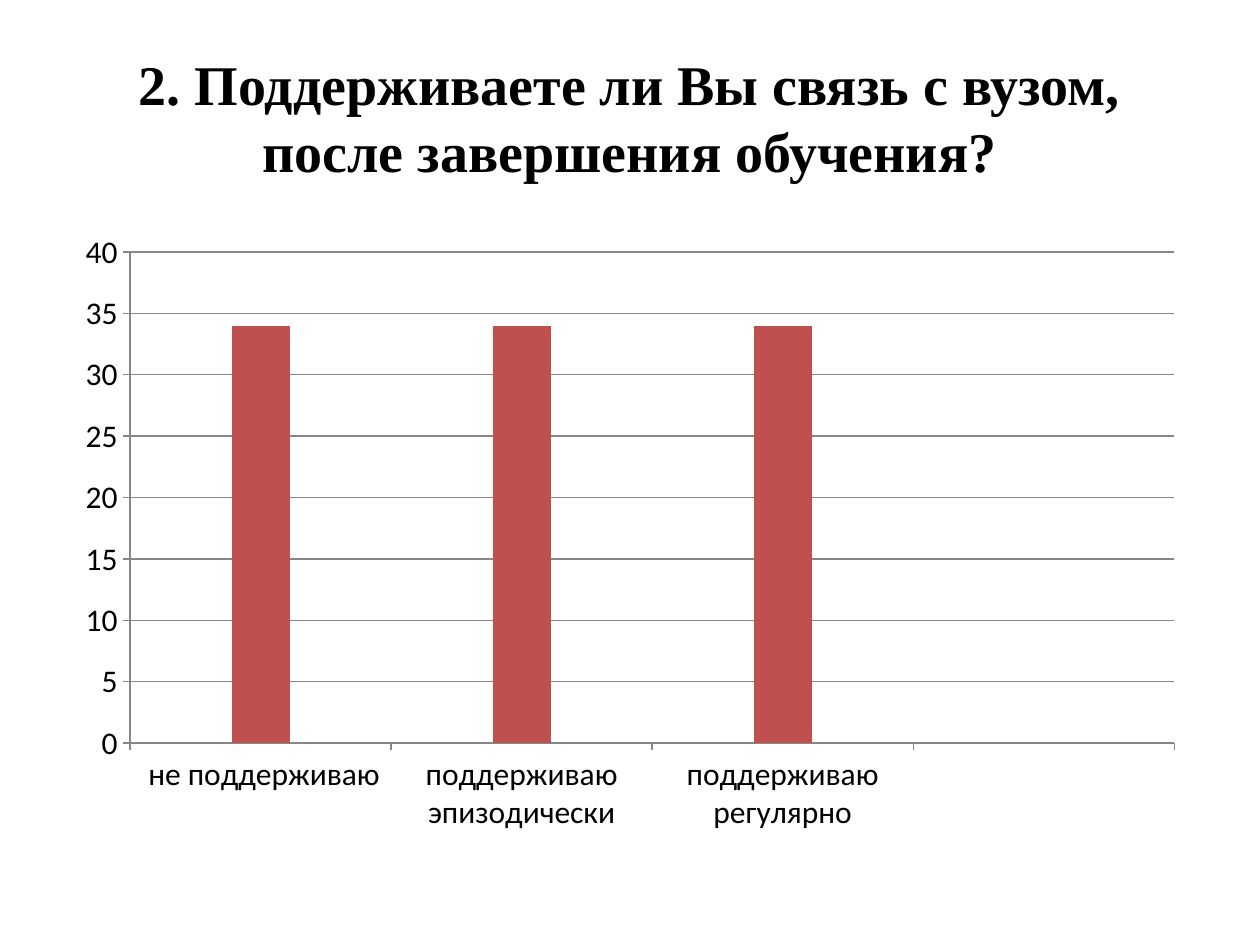
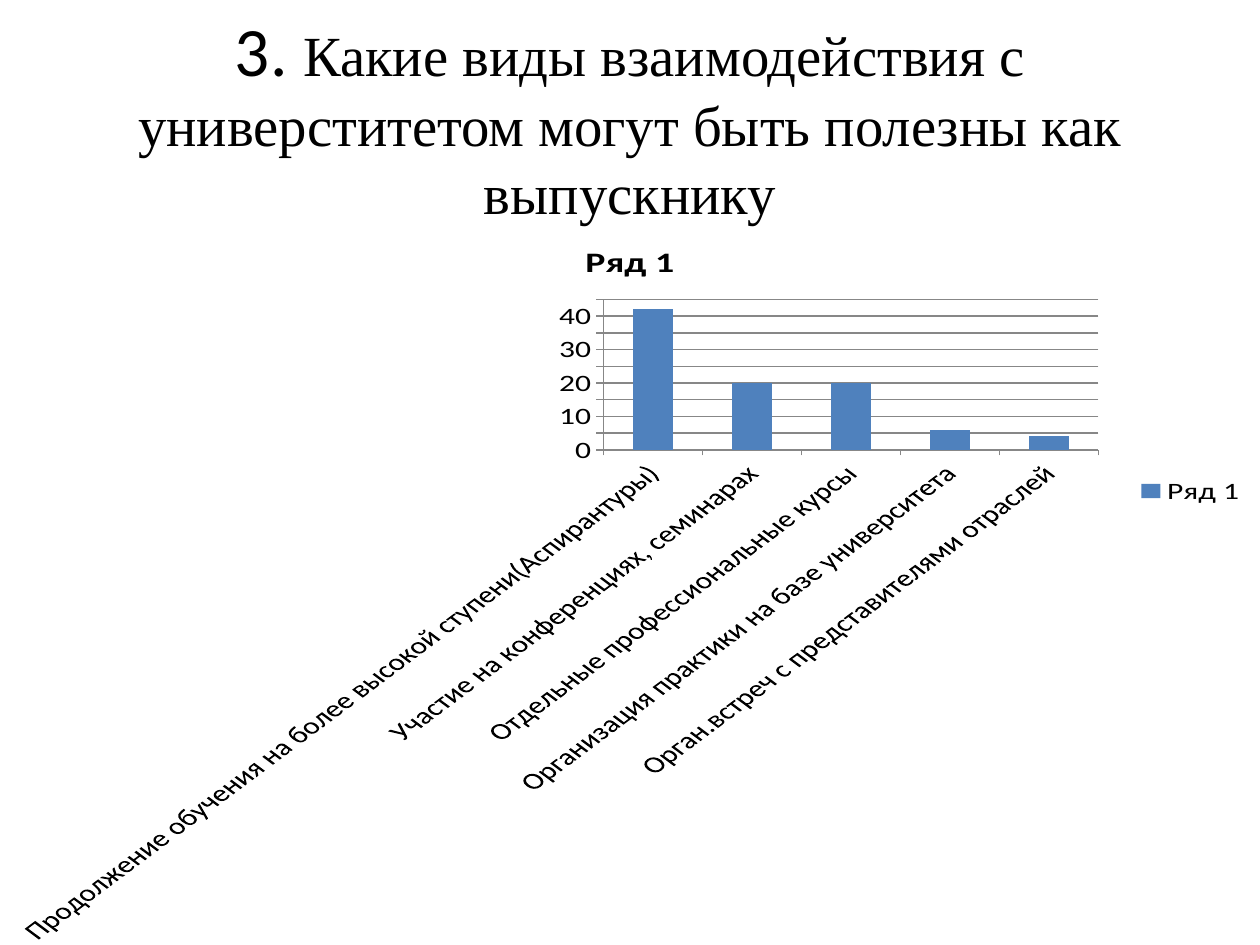
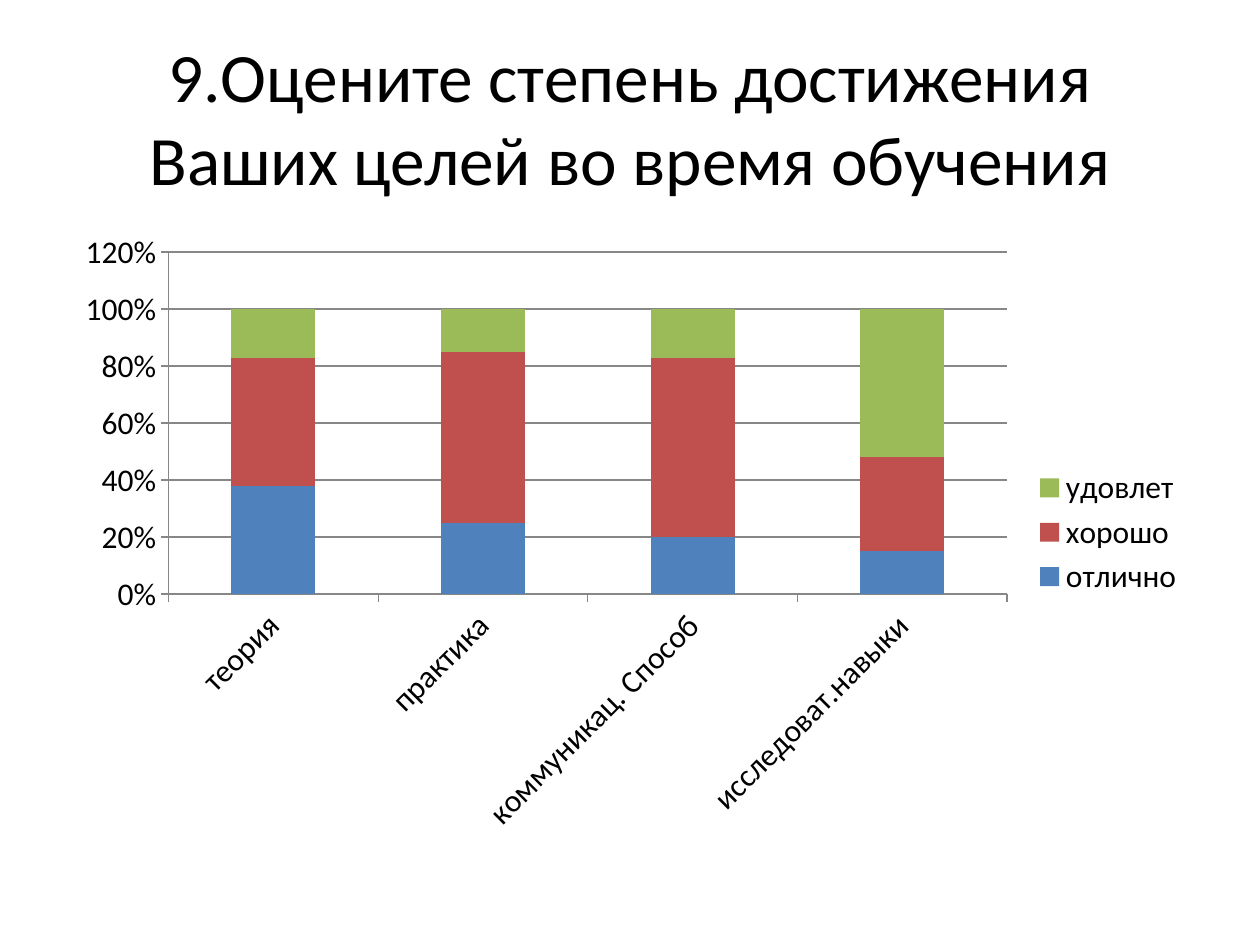
import pptx
import pptx.chart.data
import pptx.dml.color
import pptx.enum.chart
import pptx.enum.text
import pptx.util

Inches = pptx.util.Inches
Pt = pptx.util.Pt

COLORS = {
    "text": "000000",
    "grid": "878787",
    "blue": "4F81BD",
    "red": "C0504D",
    "green": "9BBB59",
}
SERIES_COLORS = ["blue", "red", "green"]
BODY_FONT = "Calibri"
SERIF_FONT = "Times New Roman"
CLUSTERED = pptx.enum.chart.XL_CHART_TYPE.COLUMN_CLUSTERED
STACKED = pptx.enum.chart.XL_CHART_TYPE.COLUMN_STACKED
STANDARD_BOX = (0.5, 1.75, 9, 4.95)
EMPTY_SERIES = [None] * 4

# Title runs are (text, size, font, bold).
SURVEY_QUESTIONS = [
    {
        "title": [("2. Поддерживаете ли Вы связь с вузом, после завершения обучения?", 32, SERIF_FONT, True)],
        "type": CLUSTERED,
        "box": STANDARD_BOX,
        "categories": [" не поддерживаю", "поддерживаю эпизодически", "поддерживаю регулярно", ""],
        "series": {
            "Series 1": EMPTY_SERIES,
            "Series 2": [34, 34, 34, None],
            "Series 3": EMPTY_SERIES,
        },
        "legend": False,
        "maximum": 40,
        "step": 5,
        "format": "General",
    },
    {
        "title": [
            ("3. ", 39.6, BODY_FONT, False),
            ("Какие виды взаимодействия с универститетом могут быть полезны как выпускнику", 32.4, SERIF_FONT, False),
        ],
        "type": CLUSTERED,
        "box": (0, 1.75, 10, 5.75),
        "chart_title": "Ряд 1",
        "categories": [
            "Продолжение обучения на более высокой ступени(Аспирантуры)",
            "Участие на конференциях, семинарах",
            "Отдельные профессиональные курсы",
            "Организация практики на базе университета",
            "Орган.встреч с представителями отраслей",
        ],
        "series": {"Ряд 1": [42, 20, 20, 6, 4]},
        "legend": True,
        "maximum": 45,
        "step": 5,
        "format": "General",
    },
    {
        "title": [("9.Оцените степень достижения Ваших целей во время обучения", 39.6, BODY_FONT, False)],
        "type": STACKED,
        "box": STANDARD_BOX,
        "categories": ["теория", "практика", "коммуникац. Способ", "исследоват.навыки"],
        "series": {
            "отлично": [0.38, 0.25, 0.2, 0.15],
            "хорошо": [0.45, 0.6, 0.63, 0.33],
            "удовлет": [0.17, 0.15, 0.17, 0.52],
        },
        "legend": True,
        "maximum": 1.2,
        "step": 0.2,
        "format": "0%",
    },
]


def color(name):
    return pptx.dml.color.RGBColor.from_string(COLORS[name])


def format_font(font, size, name=BODY_FONT, bold=False):
    font.size = Pt(size)
    font.name = name
    font.bold = bold
    font.color.rgb = color("text")


presentation = pptx.Presentation()
presentation.slide_width = Inches(10)
presentation.slide_height = Inches(7.5)
title_only_layout = presentation.slide_layouts[5]

for question in SURVEY_QUESTIONS:
    slide = presentation.slides.add_slide(title_only_layout)

    title = slide.shapes.title
    title.left, title.top, title.width, title.height = map(Inches, (0.5, 0.3, 9, 1.25))
    title.text_frame.auto_size = pptx.enum.text.MSO_AUTO_SIZE.NONE
    title.text_frame.vertical_anchor = pptx.enum.text.MSO_ANCHOR.MIDDLE
    paragraph = title.text_frame.paragraphs[0]
    paragraph.alignment = pptx.enum.text.PP_ALIGN.CENTER
    for text, size, font_name, bold in question["title"]:
        run = paragraph.add_run()
        run.text = text
        format_font(run.font, size, font_name, bold)

    chart_data = pptx.chart.data.CategoryChartData(number_format=question["format"])
    chart_data.categories = question["categories"]
    for series_name, values in question["series"].items():
        chart_data.add_series(series_name, values)
    chart = slide.shapes.add_chart(question["type"], *map(Inches, question["box"]), chart_data).chart
    format_font(chart.font, 18)

    chart.has_title = "chart_title" in question
    if chart.has_title:
        chart_title = chart.chart_title.text_frame
        chart_title.text = question["chart_title"]
        format_font(chart_title.paragraphs[0].runs[0].font, 21.6, bold=True)

    chart.has_legend = question["legend"]
    if chart.has_legend:
        chart.legend.position = pptx.enum.chart.XL_LEGEND_POSITION.RIGHT
        chart.legend.include_in_layout = False

    plot = chart.plots[0]
    plot.vary_by_categories = False
    plot.gap_width = 150
    plot.overlap = 100 if question["type"] == STACKED else 0
    for series, color_name in zip(plot.series, SERIES_COLORS):
        series.format.fill.solid()
        series.format.fill.fore_color.rgb = color(color_name)

    value_axis = chart.value_axis
    value_axis.minimum_scale = 0
    value_axis.maximum_scale = question["maximum"]
    value_axis.major_unit = question["step"]
    value_axis.has_major_gridlines = True
    value_axis.tick_labels.number_format = question["format"]
    value_axis.tick_labels.number_format_is_linked = False
    for axis in (chart.category_axis, value_axis):
        axis.major_tick_mark = pptx.enum.chart.XL_TICK_MARK.OUTSIDE
    for part in (chart.category_axis, value_axis, value_axis.major_gridlines):
        part.format.line.color.rgb = color("grid")
        part.format.line.width = Pt(0.75)

presentation.save("out.pptx")
